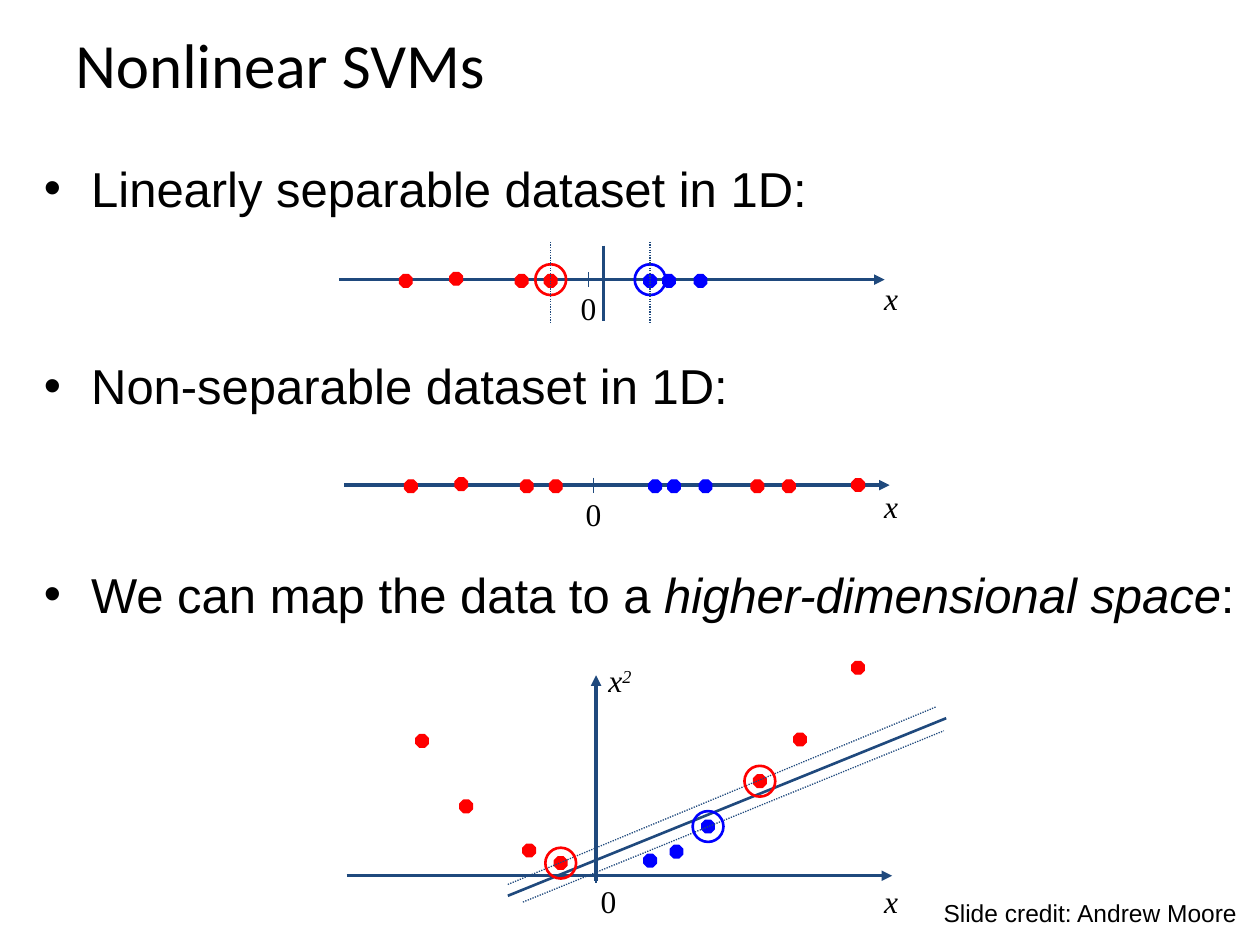
from lxml import etree
from pptx import Presentation
from pptx.dml.color import RGBColor
from pptx.enum.dml import MSO_LINE
from pptx.enum.shapes import MSO_CONNECTOR, MSO_SHAPE
from pptx.enum.text import MSO_ANCHOR
from pptx.oxml.ns import qn
from pptx.util import Pt

STRAIGHT = MSO_CONNECTOR.STRAIGHT
OCTAGON, OVAL = MSO_SHAPE.OCTAGON, MSO_SHAPE.OVAL
DOTTED = MSO_LINE.ROUND_DOT
MIDDLE = MSO_ANCHOR.MIDDLE

NAVY, RED, BLUE, BLACK = "1F497D", "FF0000", "0000FF", "000000"
SERIF, SANS = "Times New Roman", "Arial"

# Content: each bullet has its space before and (text, italic) runs
TITLE = "Nonlinear SVMs"
CREDIT = "Slide credit: Andrew Moore"
BULLETS = [
    (0, [("Linearly separable dataset in 1D:", False)]),
    (79.2, [("Non-separable dataset in 1D:", False)]),
    (85.5, [("We can map the data to a ", False),
            ("higher-dimensional space", True), (":", False)]),
]

# One-dimensional data: (distance from the axis start, distance below the axis)
LEFT_REDS = [(38.2, 0.7), (67, -0.5), (104.4, 0.7), (121, 0.7)]
BLUES = [(177.8, 0.7), (188.6, 0.7), (206.6, 0.7)]
RIGHT_REDS = [(236.2, 0.7), (254.2, 0.7), (293.8, 0)]

# Mapped data: dot centres on the slide
MAPPED_REDS = [(241.2, 423.4), (266.4, 460.8), (302.4, 486), (320.4, 493.2),
               (434.2, 446.4), (457.2, 422.6), (490.3, 381.6)]
MAPPED_BLUES = [(371.5, 491.8), (386.6, 486.7), (404.6, 472.3)]
MAPPED_SUPPORT = [(MAPPED_REDS[3], RED), (MAPPED_REDS[4], RED), (MAPPED_BLUES[2], BLUE)]
MARGINS = [((290.2, 505.4), (535, 403.9)), ((298.8, 515.5), (539.3, 417.6))]
BOUNDARY = ((290.2, 511.9), (540.7, 410.4))

AXIS_LENGTH, ZERO = 311.8, 142.6
DOT, RING = 7.2, 17.6
X_LABEL_LEFT = 498.2

presentation = Presentation()
presentation.slide_width, presentation.slide_height = Pt(720), Pt(540)
slide = presentation.slides.add_slide(presentation.slide_layouts[6])


def rgb(value):
    return RGBColor.from_string(value)


def style(font, name, size, italic=False):
    font.name, font.size, font.italic = name, Pt(size), italic
    font.color.rgb = rgb(BLACK)


def add_box(left, top, width, height, wrap=True):
    box = slide.shapes.add_textbox(Pt(left), Pt(top), Pt(width), Pt(height))
    box.text_frame.word_wrap = wrap
    return box.text_frame


def add_label(text, left, top, width=36, height=28.8, name=SERIF, size=18,
              italic=False, wrap=True):
    frame = add_box(left, top, width, height, wrap)
    paragraph = frame.paragraphs[0]
    paragraph.add_run().text = text
    style(paragraph.font, name, size, italic)
    return frame


def add_line(start, end, width=0.75, dotted=False, arrow=False):
    points = [Pt(value) for value in (*start, *end)]
    connector = slide.shapes.add_connector(STRAIGHT, *points)
    connector.line.color.rgb = rgb(NAVY)
    connector.line.width = Pt(width)
    if dotted:
        connector.line.dash_style = DOTTED
    if arrow:
        etree.SubElement(connector.line._get_or_add_ln(), qn("a:tailEnd"), type="triangle")
    etree.SubElement(connector._element.spPr, qn("a:effectLst"))


def add_mark(kind, centre, size, color, width):
    x, y = centre
    shape = slide.shapes.add_shape(kind, Pt(x - size / 2), Pt(y - size / 2), Pt(size), Pt(size))
    shape.shadow.inherit = False
    shape.line.color.rgb = rgb(color)
    shape.line.width = Pt(width)
    if kind == OCTAGON:
        shape.fill.solid()
        shape.fill.fore_color.rgb = rgb(color)
    else:
        shape.fill.background()


def add_dots(reds, blues):
    for centres, color in ((reds, RED), (blues, BLUE)):
        for centre in centres:
            add_mark(OCTAGON, centre, DOT, color, 0.75)


def add_ring(centre, color):
    add_mark(OVAL, centre, RING, color, 1.5)


def add_axis(left, y, zero_left, zero_top, x_top):
    add_line((left, y), (left + AXIS_LENGTH, y), 2, arrow=True)
    add_line((left + ZERO, y - 4.3), (left + ZERO, y + 4.3))
    add_label("0", zero_left, zero_top, 27.4)
    add_label("x", X_LABEL_LEFT, x_top, italic=True)


def add_number_line(left, y, reds, x_top):
    add_axis(left, y, left + 131, y + 2, x_top)
    add_dots(*([(left + dx, y + dy) for dx, dy in data] for data in (reds, BLUES)))


# Title and bullets
add_label(TITLE, 36, 0, 648, 72, "Calibri", 36).vertical_anchor = MIDDLE
frame = add_box(18, 87, 702, 396)
for index, (space, runs) in enumerate(BULLETS):
    paragraph = frame.add_paragraph() if index else frame.paragraphs[0]
    paragraph.space_before = Pt(space)
    properties = paragraph._p.get_or_add_pPr()
    properties.set("marL", str(Pt(27)))
    properties.set("indent", str(-Pt(27)))
    etree.SubElement(properties, qn("a:buFont"), typeface=SANS)
    etree.SubElement(properties, qn("a:buChar"), char="•")
    for text, italic in runs:
        run = paragraph.add_run()
        run.text = text
        style(run.font, SANS, 28, italic)

# Separable data with its boundary and margins
left, y = 193.7, 159.8
add_number_line(left, y, LEFT_REDS, 156.1)
add_line((344.9, 140.4), (344.9, 183.6), 1.5)
for (dx, _), color in ((LEFT_REDS[-1], RED), (BLUES[0], BLUE)):
    add_ring((left + dx, y), color)
    add_line((left + dx, 138.2), (left + dx, 185), dotted=True)

# Non-separable data
add_number_line(196.6, 277.2, LEFT_REDS + RIGHT_REDS, 274.9)

# Data mapped to two dimensions
left, y = 198, 500.4
add_axis(left, y, 336.2, 500.2, 500.2)
add_dots(MAPPED_REDS, MAPPED_BLUES)
add_line((left + ZERO, 503.3), (left + ZERO, 385.9), 2, arrow=True)
square_label = add_label("x", left + ZERO, 374.2, italic=True)
exponent = square_label.paragraphs[0].add_run()
exponent.text = "2"
exponent._r.get_or_add_rPr().set("baseline", "30000")
add_line(*BOUNDARY, 1.5)
for margin in MARGINS:
    add_line(*margin, dotted=True)
for centre, color in MAPPED_SUPPORT:
    add_ring(centre, color)

# Credit
add_label(CREDIT, 532.1, 509.8, 182.2, 23.8, SANS, 14, wrap=False)

presentation.save("out.pptx")
